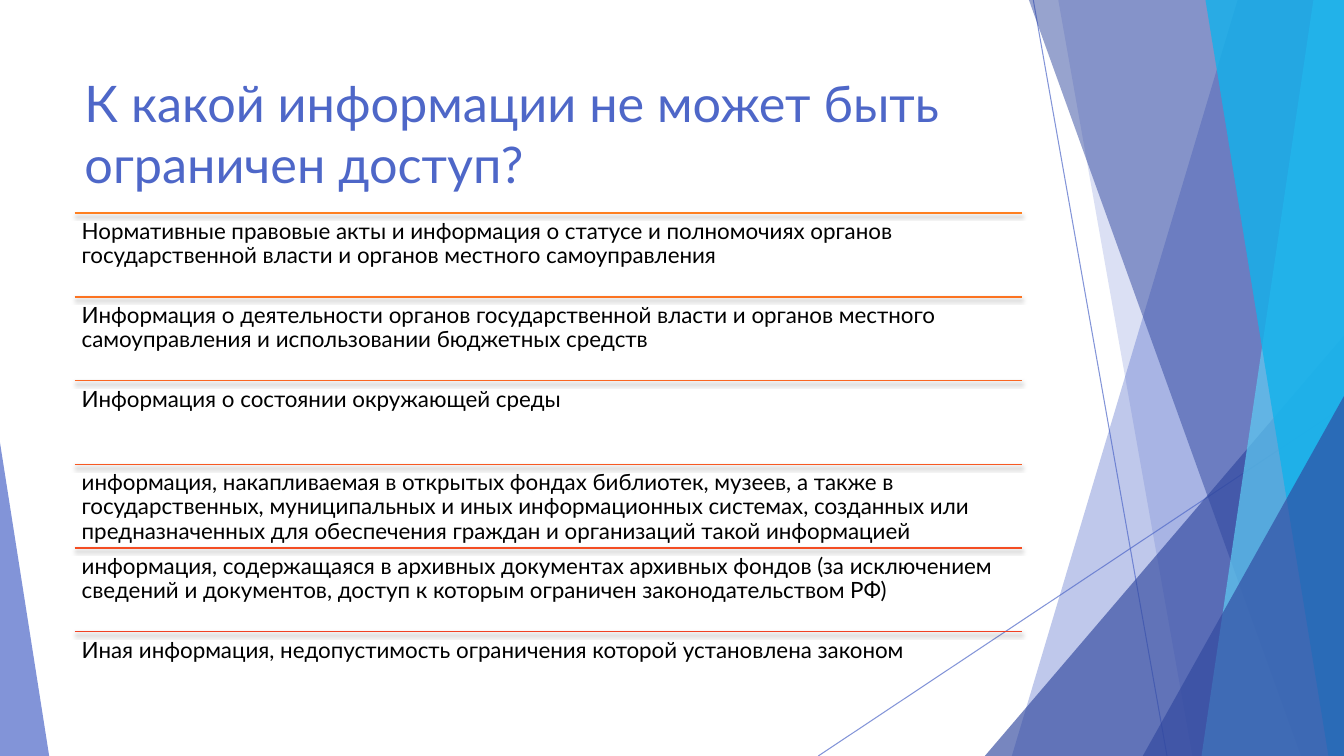
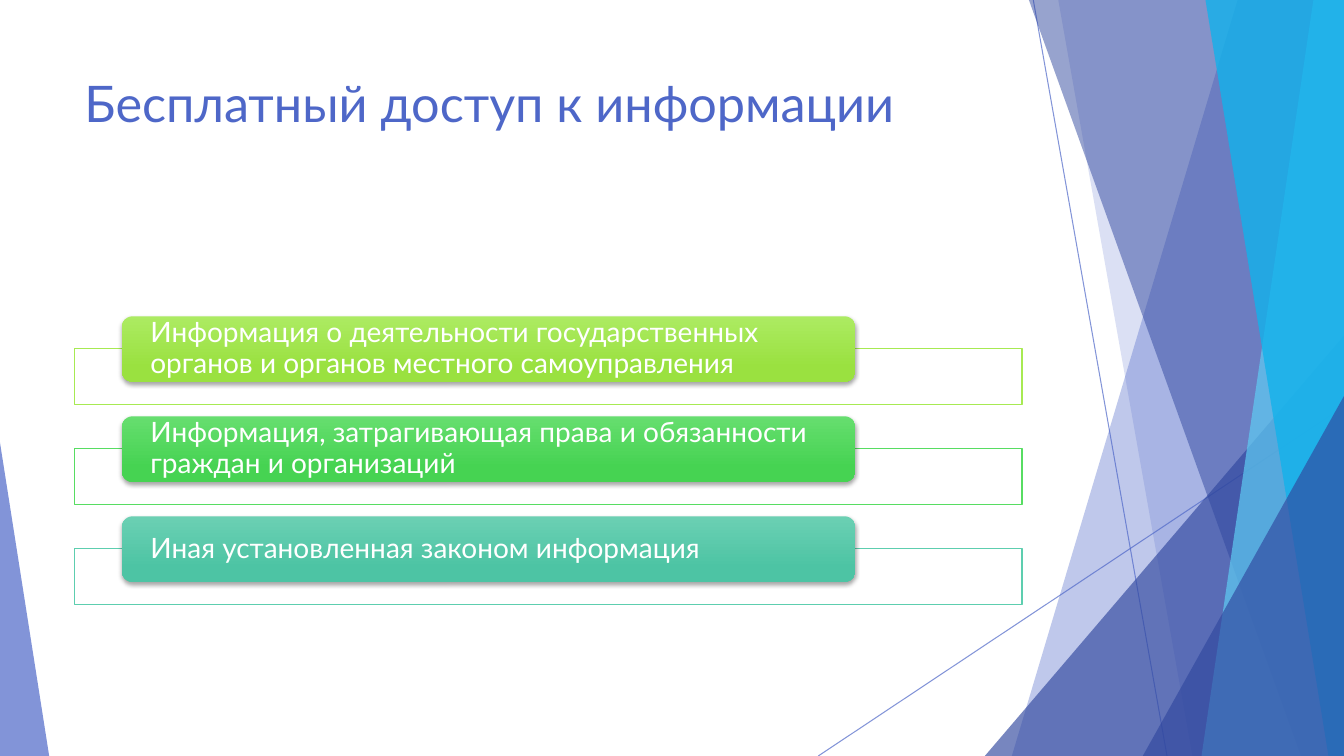
from lxml import etree
from pptx import Presentation
from pptx.dml.color import RGBColor
from pptx.enum import shapes, text as txt
from pptx.oxml.ns import qn
from pptx.util import Cm, Pt

FONT = "Lato"
ACCENT, NAVY, AQUA, SKY = "4E67C8", "31489F", "5ECCF3", "12B2EB"
WHITE, BLACK = "FFFFFF", "000000"
WIDTH, HEIGHT = 33.87, 19.05
LEFT, CONTENT_WIDTH = 1.88, 23.88


def paint(shape, fill=None, line=None, weight=1, alpha=100, shadow=False):
    """Set fill (one hex or a gradient pair), outline, opacity and shadow."""
    if isinstance(fill, tuple):
        shape.fill.gradient()
        shape.fill.gradient_angle = 270
        for stop, colour, position in zip(shape.fill.gradient_stops, fill, (0, 0.78)):
            stop.color.rgb = RGBColor.from_string(colour)
            stop.position = position
    elif fill:
        shape.fill.solid()
        shape.fill.fore_color.rgb = RGBColor.from_string(fill)
    if line:
        shape.line.color.rgb = RGBColor.from_string(line)
        shape.line.width = Pt(weight)
    else:
        shape.line.fill.background()
    properties = shape.element.spPr
    if alpha < 100:
        colour = next(properties.iter(qn("a:srgbClr")))
        etree.SubElement(colour, qn("a:alpha"), val=str(alpha * 1000))
    effects = etree.SubElement(properties, qn("a:effectLst"))
    if shadow:
        outer = etree.SubElement(effects, qn("a:outerShdw"), blurRad=str(Pt(3)),
                                 dist=str(Pt(2)), dir="5400000", rotWithShape="0")
        black = etree.SubElement(outer, qn("a:srgbClr"), val=BLACK)
        etree.SubElement(black, qn("a:alpha"), val="35000")


def write(shape, text, size, colour, inset=(0.25, 0.13), spacing=1.0,
          anchor=txt.MSO_ANCHOR.TOP):
    frame = shape.text_frame
    frame.word_wrap = True
    frame.vertical_anchor = anchor
    frame.margin_left = frame.margin_right = Cm(inset[0])
    frame.margin_top = frame.margin_bottom = Cm(inset[1])
    paragraph = frame.paragraphs[0]
    paragraph.alignment = txt.PP_ALIGN.LEFT
    paragraph.line_spacing = spacing
    run = paragraph.add_run()
    run.text = text
    run.font.name, run.font.size = FONT, Pt(size)
    run.font.color.rgb = RGBColor.from_string(colour)


deck = Presentation()
deck.slide_width, deck.slide_height = Cm(WIDTH), Cm(HEIGHT)

# Shared background and title
rays = [(26.04, 0, 29.41, HEIGHT), (WIDTH, 10.24, 20.62, HEIGHT)]
# Bands run to the right edge: colour, opacity, top x, bottom x
# Wedges stand on the bottom edge: colour, opacity, left, width, height, tip
facets = [
    (ACCENT, 36, 31.19, 25.5),
    (ACCENT, 20, 26.67, 30.05),
    (NAVY, 66, 24.82, 9.05, 10.59, 1),
    (NAVY, 50, 25.93, 32.79),
    (AQUA, 70, 33.1, 30.28),
    (SKY, 80, 30.38, 33.48),
    (NAVY, 66, 28.8, 5.07, 9.07, 1),
    (ACCENT, 70, 0, 1.24, 7.9, 0),
]
titles = ["К какой информации не может быть ограничен доступ?",
          "Бесплатный доступ к информации"]
slides = []
for title in titles:
    slide = deck.slides.add_slide(deck.slide_layouts[6])
    slides.append(slide)
    for ray in rays:
        paint(slide.shapes.add_connector(shapes.MSO_CONNECTOR.STRAIGHT, *map(Cm, ray)),
              line=ACCENT, weight=0.75, alpha=70)
    for colour, alpha, *outline in facets:
        if len(outline) == 2:
            top_x, bottom_x = outline
            builder = slide.shapes.build_freeform(Cm(top_x), 0)
            builder.add_line_segments([(Cm(WIDTH), 0), (Cm(WIDTH), Cm(HEIGHT)),
                                       (Cm(bottom_x), Cm(HEIGHT))])
            facet = builder.convert_to_shape()
        else:
            left, width, height, tip = outline
            facet = slide.shapes.add_shape(
                shapes.MSO_SHAPE.ISOSCELES_TRIANGLE, Cm(left), Cm(HEIGHT - height),
                Cm(width), Cm(height))
            facet.adjustments[0] = tip
        paint(facet, fill=colour, alpha=alpha)
    heading = slide.shapes.add_textbox(Cm(LEFT), Cm(1.7), Cm(CONTENT_WIDTH), Cm(3.66))
    write(heading, title, 36, ACCENT)

open_slide, free_slide = slides

# Information that must stay open
open_information = [
    ("FF8021", "Нормативные правовые акты и информация о статусе и полномочиях органов "
               "государственной власти и органов местного самоуправления"),
    ("FC7321", "Информация о деятельности органов государственной власти и органов местного "
               "самоуправления и использовании бюджетных средств"),
    ("FA6622", "Информация о состоянии окружающей среды"),
    ("F75923", "информация, накапливаемая в открытых фондах библиотек, музеев, а также в "
               "государственных, муниципальных и иных информационных системах, созданных или "
               "предназначенных для обеспечения граждан и организаций такой информацией"),
    ("F44D23", "информация, содержащаяся в архивных документах архивных фондов (за исключением "
               "сведений и документов, доступ к которым ограничен законодательством РФ)"),
    ("F14124", "Иная информация, недопустимость ограничения которой установлена законом"),
]
ROW_TOP, ROW_HEIGHT = 5.37, 2.11
for index, (colour, statement) in enumerate(open_information):
    top = Cm(ROW_TOP + index * ROW_HEIGHT)
    rule = open_slide.shapes.add_connector(shapes.MSO_CONNECTOR.STRAIGHT, Cm(LEFT), top,
                                           Cm(LEFT + CONTENT_WIDTH), top)
    paint(rule, line=colour, shadow=True)
    row = open_slide.shapes.add_textbox(Cm(LEFT), top, Cm(CONTENT_WIDTH), Cm(ROW_HEIGHT))
    write(row, statement, 16, BLACK, inset=(0.18, 0.18), spacing=0.9)

# Information provided free of charge
free_information = [
    ("A7EA52", ("ACEB62", "9AE140"),
     "Информация о деятельности государственных органов и органов местного самоуправления"),
    ("57DD62", ("66DE6F", "46D352"),
     "Информация, затрагивающая права и обязанности граждан и организаций"),
    ("5DCEAF", ("6BD0B3", "4DC4A4"), "Иная установленная законом информация"),
]
LABEL_TOP, LABEL_STEP, FRAME_DROP = 7.97, 2.52, 0.82
for index, (outline, gradient, statement) in enumerate(free_information):
    top = LABEL_TOP + index * LABEL_STEP
    frame = free_slide.shapes.add_shape(shapes.MSO_SHAPE.RECTANGLE, Cm(LEFT),
                                        Cm(top + FRAME_DROP), Cm(CONTENT_WIDTH), Cm(1.4))
    paint(frame, fill=WHITE, line=outline, alpha=90)
    label = free_slide.shapes.add_shape(shapes.MSO_SHAPE.ROUNDED_RECTANGLE, Cm(3.07),
                                        Cm(top), Cm(18.49), Cm(1.65))
    paint(label, fill=gradient, shadow=True)
    write(label, statement, 20, WHITE, inset=(0.64, 0), spacing=0.9,
          anchor=txt.MSO_ANCHOR.MIDDLE)

deck.save("out.pptx")
